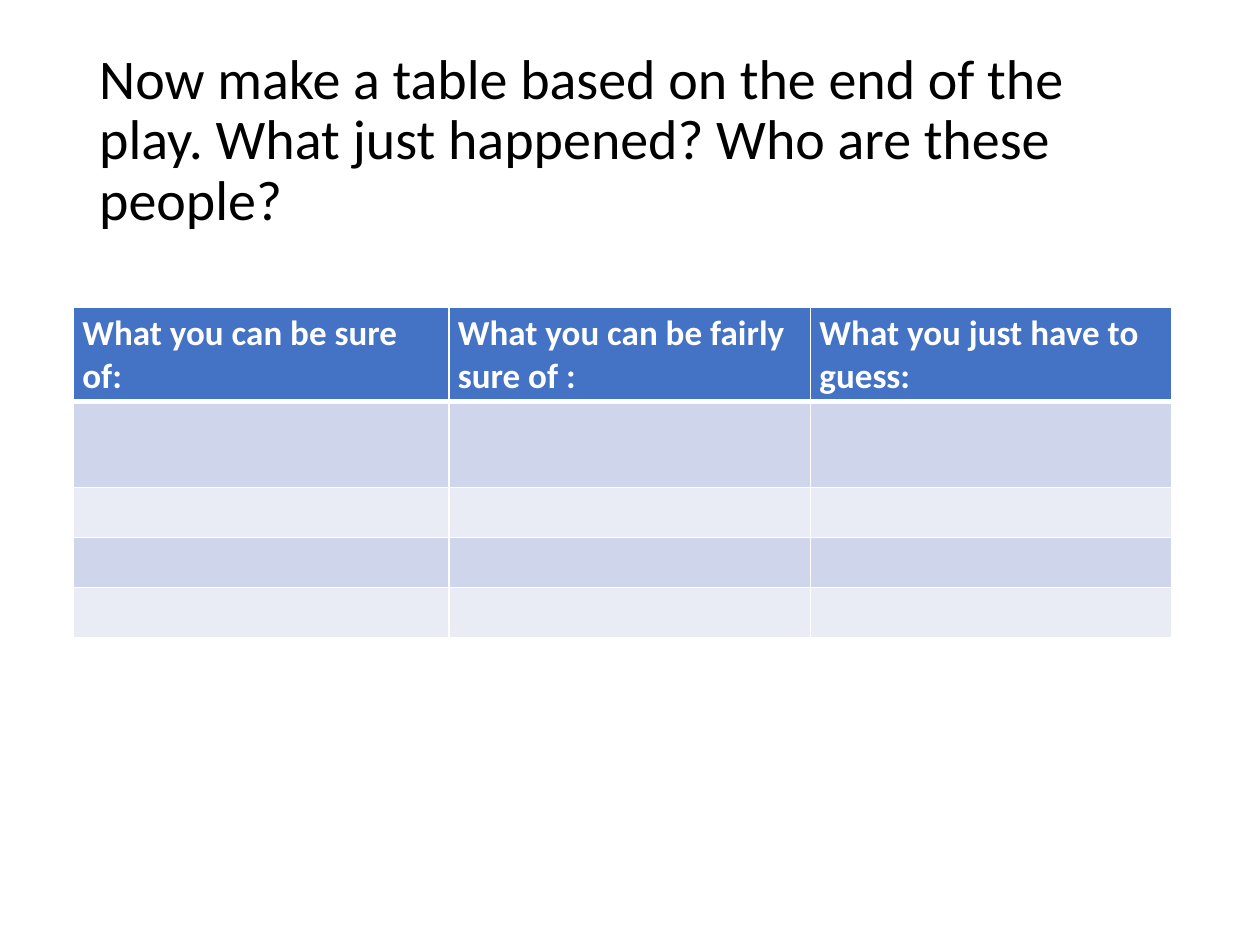
import pptx
import pptx.dml.color
import pptx.enum.text
import pptx.oxml
import pptx.oxml.ns
import pptx.util
from pptx.util import Cm

FONT = "Calibri"
TITLE = ("Now make a table based on the end of the play. "
         "What just happened? Who are these people?")
HEADINGS = ["What you can be sure of:", "What you can be fairly sure of :",
            "What you just have to guess:"]
COLUMN_WIDTHS = [7.57, 7.29, 7.29]
ROW_HEIGHTS = [1.88, 1.73, 1.01, 1.01, 1.01]
HEADER_FILL = "4472C4"
BAND_FILLS = ["E9EBF5", "CFD5EA"]
WHITE = "FFFFFF"


def color(value):
    return pptx.dml.color.RGBColor.from_string(value)


def style_text(para, size, value, bold=False):
    for span in para.runs:
        span.font.name = FONT
        span.font.size = pptx.util.Pt(size)
        span.font.bold = bold
        span.font.color.rgb = color(value)


def add_title(page):
    box = page.shapes.add_textbox(Cm(1.75), Cm(1.02), Cm(21.9), Cm(3.68))
    frame = box.text_frame
    frame.word_wrap = True
    frame.vertical_anchor = pptx.enum.text.MSO_ANCHOR.MIDDLE
    frame.text = TITLE
    para = frame.paragraphs[0]
    para.line_spacing = 0.9
    style_text(para, 32, "000000")


def set_borders(cell, bottom_width):
    """Draw white lines round the cell, 1 pt wide except at the bottom."""
    properties = cell._tc.get_or_add_tcPr()
    widths = {"lnL": 1, "lnR": 1, "lnT": 1, "lnB": bottom_width}
    for position, (side, width) in enumerate(widths.items()):
        line = pptx.oxml.parse_xml(
            f'<a:{side} {pptx.oxml.ns.nsdecls("a")} w="{pptx.util.Pt(width)}">'
            f'<a:solidFill><a:srgbClr val="{WHITE}"/></a:solidFill></a:{side}>')
        properties.insert(position, line)


def style_cell(cell, fill, bottom_width):
    cell.margin_left = cell.margin_right = Cm(0.18)
    cell.margin_top = cell.margin_bottom = Cm(0.1)
    cell.fill.solid()
    cell.fill.fore_color.rgb = color(fill)
    set_borders(cell, bottom_width)


def add_certainty_table(page):
    table = page.shapes.add_table(
        len(ROW_HEIGHTS), len(COLUMN_WIDTHS), Cm(1.48), Cm(6.2),
        Cm(sum(COLUMN_WIDTHS)), Cm(sum(ROW_HEIGHTS))).table
    for column, width in zip(table.columns, COLUMN_WIDTHS):
        column.width = Cm(width)
    for number, (row, height) in enumerate(zip(table.rows, ROW_HEIGHTS)):
        row.height = Cm(height)
        fill = BAND_FILLS[number % 2] if number else HEADER_FILL
        for cell in row.cells:
            style_cell(cell, fill, 1 if number else 3)
    for cell, heading in zip(table.rows[0].cells, HEADINGS):
        cell.text = heading
        style_text(cell.text_frame.paragraphs[0], 20, WHITE, bold=True)


def main():
    deck = pptx.Presentation()
    deck.slide_width, deck.slide_height = Cm(25.4), Cm(19.05)
    page = deck.slides.add_slide(deck.slide_layouts[6])
    page.background.fill.solid()
    page.background.fill.fore_color.rgb = color(WHITE)
    add_title(page)
    add_certainty_table(page)
    deck.save("out.pptx")


if __name__ == "__main__":
    main()
